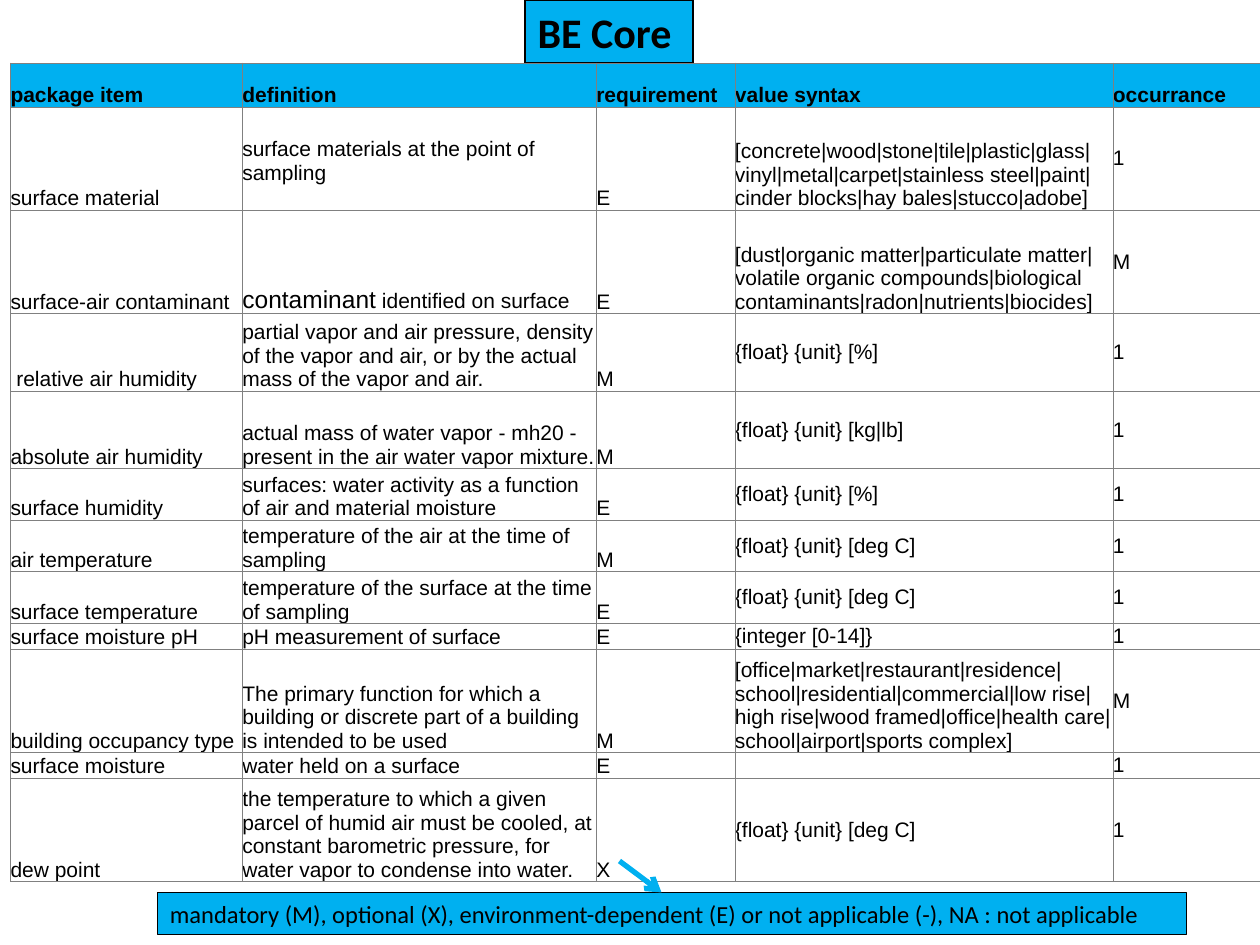
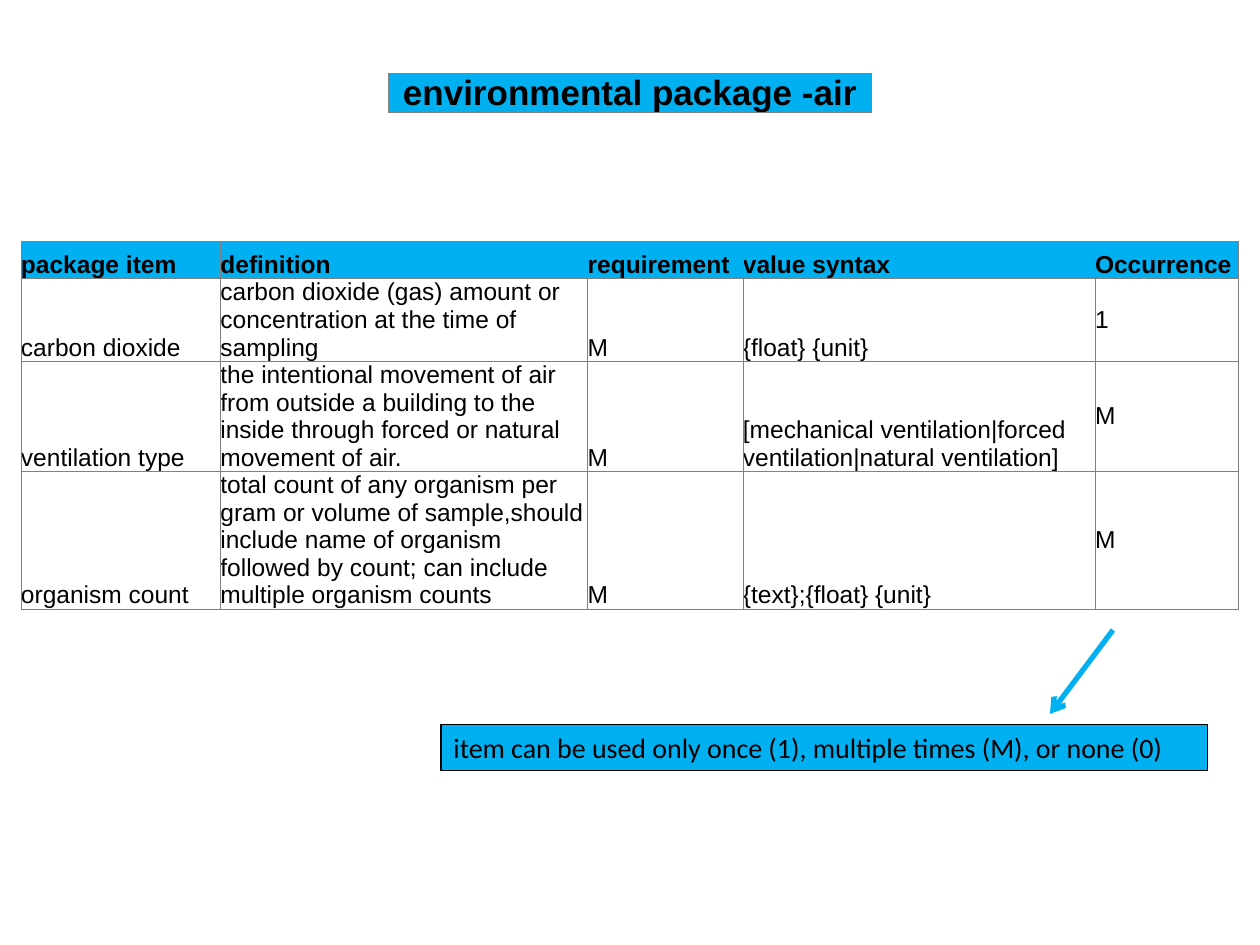
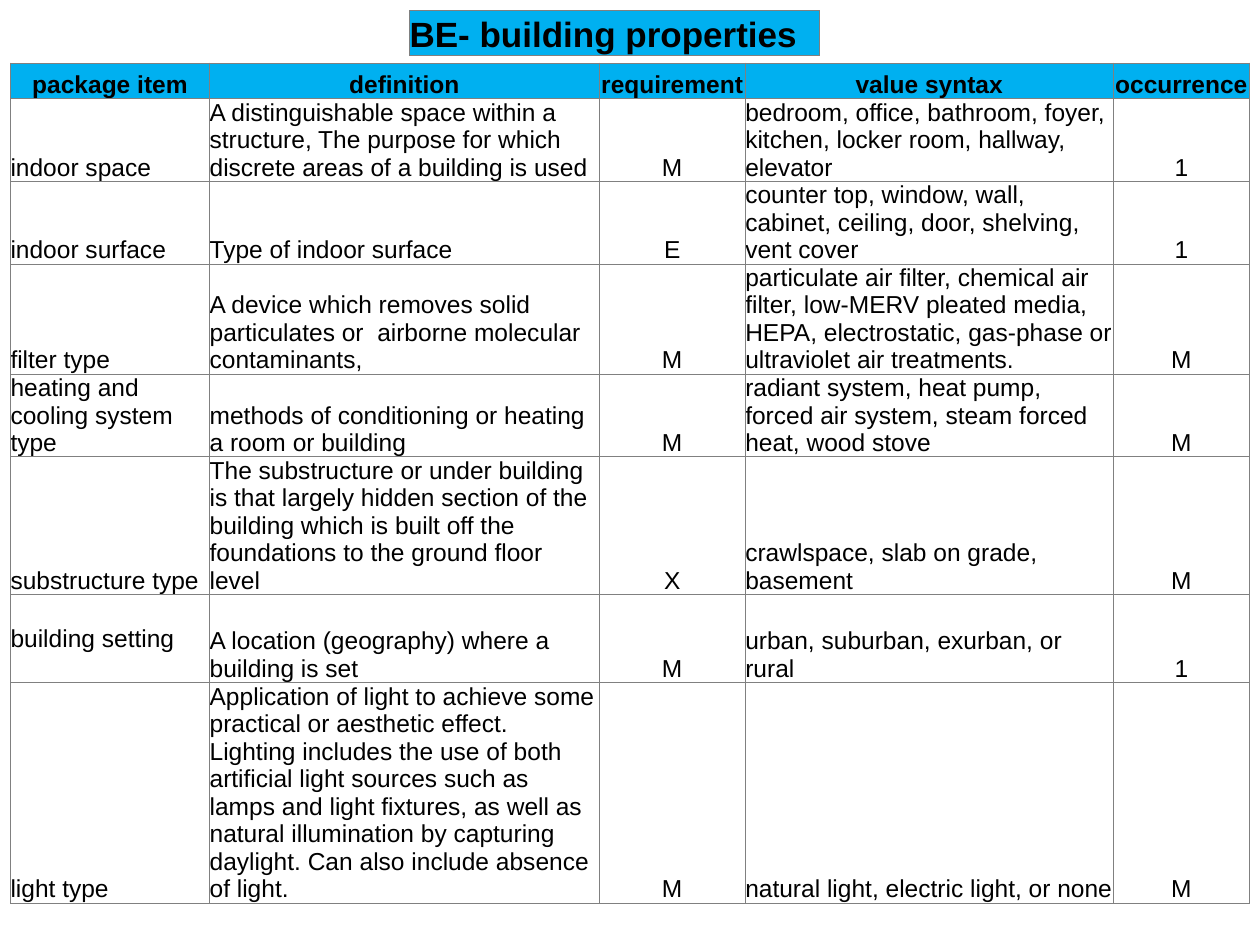
from lxml.etree import SubElement as Sub
from pptx import Presentation
from pptx.dml.color import RGBColor
from pptx.enum.shapes import MSO_CONNECTOR as Link
from pptx.enum.text import MSO_ANCHOR as Anchor, MSO_AUTO_SIZE as Fit, PP_ALIGN as Align
from pptx.oxml.ns import qn
from pptx.util import Inches, Pt

BLUE, BLACK, GREY = "00B0F0", "000000", "808080"
COLS, ROWS = 120, 90  # slide grid, twelve units to the inch
UNIT = Inches(10) / COLS
SIDES = ("left", "right", "top", "bottom")
TEXT = dict(word_wrap=True, auto_size=Fit.NONE)
TITLED, BLANK = 5, 6  # slide layouts

HEAD = ("package item", "definition", "requirement", "value syntax")

CORE = [
    HEAD + ("occurrance",),
    ("surface material", "surface materials at the point of sampling \n", "E",
     "[concrete|wood|stone|tile|plastic|glass|vinyl|metal|carpet|stainless steel|paint|"
     "cinder blocks|hay bales|stucco|adobe]", "1"),
    ("surface-air contaminant", ("contaminant", " identified on surface"), "E",
     "[dust|organic matter|particulate matter|volatile organic compounds|"
     "biological contaminants|radon|nutrients|biocides]", "M"),
    (" relative air humidity", "partial vapor and air pressure, density of the vapor and air, "
     "or by the actual mass of the vapor and air.", "M", "{float} {unit} [%]", "1"),
    ("absolute air humidity", "actual mass of water vapor - mh20 - present in the air "
     "water vapor mixture.", "M", "{float} {unit} [kg|lb]", "1"),
    ("surface humidity", "surfaces: water activity as a function of air and material moisture",
     "E", "{float} {unit} [%]", "1"),
    ("air temperature", "temperature of the air at the time of sampling",
     "M", "{float} {unit} [deg C]", "1"),
    ("surface temperature", "temperature of the surface at the time of sampling",
     "E", "{float} {unit} [deg C]", "1"),
    ("surface moisture pH", "pH measurement of surface", "E", "{integer [0-14]}", "1"),
    ("building occupancy type", "The primary function for which a building or discrete part "
     "of a building is intended to be used", "M",
     "[office|market|restaurant|residence|school|residential|commercial|low rise|high rise|"
     "wood framed|office|health care|school|airport|sports complex]", "M"),
    ("surface moisture", "water held on a surface", "E", "", "1"),
    ("dew point", "the temperature to which a given parcel of humid air must be cooled, "
     "at constant barometric pressure, for water vapor to condense into water.",
     "X", "{float} {unit} [deg C]", "1"),
]

AIR = [
    HEAD + ("Occurrence",),
    ("carbon dioxide", "carbon dioxide (gas) amount or concentration at the time of sampling",
     "M", "{float} {unit}", "1"),
    ("ventilation type", "the intentional movement of air from outside a building to the inside "
     "through forced or natural movement of air.", "M",
     "[mechanical ventilation|forced ventilation|natural ventilation]", "M"),
    ("organism count", "total count of any organism per gram or volume of sample,should include "
     "name of organism followed by count; can include multiple organism counts",
     "M", "{text};{float} {unit}", "M"),
]

BUILD = [
    HEAD + ("occurrence",),
    ("indoor space", "A distinguishable space within a structure, The purpose for which "
     "discrete areas of a building is used", "M",
     "bedroom, office, bathroom, foyer, kitchen, locker room, hallway, elevator", "1"),
    ("indoor surface", "Type of indoor surface", "E",
     "counter top, window, wall, cabinet, ceiling, door, shelving, vent cover", "1"),
    ("filter type", "A device which removes solid particulates or  airborne molecular "
     "contaminants,", "M", "particulate air filter, chemical air filter, low-MERV pleated media, "
     "HEPA, electrostatic, gas-phase or ultraviolet air treatments.", "M"),
    ("heating and cooling system type", "methods of conditioning or heating a room or building",
     "M", "radiant system, heat pump, forced air system, steam forced heat, wood stove", "M"),
    ("substructure type", "The substructure or under building is that largely hidden section of "
     "the building which is built off the foundations to the ground floor level", "X",
     "crawlspace, slab on grade, basement", "M"),
    ("building setting\n", "A location (geography) where a building is set", "M",
     "urban, suburban, exurban, or rural", "1"),
    ("light type", "Application of light to achieve some practical or aesthetic effect. Lighting "
     "includes the use of both artificial light sources such as lamps and light fixtures, as well "
     "as natural illumination by capturing daylight. Can also include absence of light.", "M",
     "natural light, electric light, or none", "M"),
]


def rgb(tone):
    return RGBColor.from_string(tone)


def grid(*vals):
    return [round(v * UNIT) for v in vals]


def style(item, vals):
    for key, val in vals.items():
        setattr(item, key, val)


def write(para, text, size, face="Arial", bold=False):
    run = para.add_run()
    run.text = text
    style(run.font, dict(name=face, size=Pt(size), bold=bold))
    run.font.color.rgb = rgb(BLACK)


def paint(shape):
    shape.fill.solid()
    shape.fill.fore_color.rgb = rgb(BLUE)
    shape.line.color.rgb = rgb(BLACK)
    shape.line.width = Pt(0.75)


def title(slide, box, text):
    shape = slide.shapes.title
    style(shape, dict(zip(("left", "top", "width", "height"), grid(*box))))
    paint(shape)
    style(shape.text_frame, TEXT | dict(vertical_anchor=Anchor.TOP))
    para = shape.text_frame.paragraphs[0]
    para.alignment = Align.LEFT
    write(para, text, 24, "Calibri", bold=True)


def note(slide, box, text, size):
    shape = slide.shapes.add_textbox(*grid(*box))
    paint(shape)
    style(shape.text_frame, TEXT)
    write(shape.text_frame.paragraphs[0], text, size, "Calibri")


def arrow(slide, *ends):
    line = slide.shapes.add_connector(Link.STRAIGHT, *grid(*ends))
    line.line.color.rgb = rgb(BLUE)
    line.line.width = Pt(3)
    Sub(line.line._get_or_add_ln(), qn("a:tailEnd"), type="arrow")
    Sub(line._element.spPr, qn("a:effectLst"))


def rule(cell):
    """Draw a thin grey line on each side of the cell."""
    props = cell._tc.get_or_add_tcPr()
    for spot, side in enumerate("LRTB"):
        edge = Sub(props, qn(f"a:ln{side}"), w=str(Pt(0.5)))
        Sub(Sub(edge, qn("a:solidFill")), qn("a:srgbClr"), val=GREY)
        props.insert(spot, edge)


def fill(cell, text, size, head, mid, align):
    """A line feed at the end becomes a line break; a tuple opens with a larger run."""
    style(cell, {f"margin_{side}": 0 for side in SIDES})
    cell.vertical_anchor = Anchor.MIDDLE if mid else Anchor.BOTTOM
    if head:
        cell.fill.solid()
        cell.fill.fore_color.rgb = rgb(BLUE)
    else:
        cell.fill.background()
    rule(cell)
    para = cell.text_frame.paragraphs[0]
    para.alignment = align
    points = str(size * 100)
    if isinstance(text, tuple):
        write(para, text[0], size + 2)
        write(para, text[1], size)
    elif text:
        write(para, text.rstrip("\n"), size, bold=head)
        if text.endswith("\n"):
            para.add_line_break()
            Sub(para._p.find(qn("a:br")), qn("a:rPr"), sz=points)
    para._p.get_or_add_endParaRPr().set("sz", points)


def table(slide, box, data, cols, lines, size, mids=(), mains=()):
    """Share the box by column weights and lines per row.

    mids are columns set in the middle of the row, mains are centred columns."""
    left, top, wide, high = grid(*box)
    grille = slide.shapes.add_table(len(data), len(cols), left, top, wide, high).table
    style(grille, dict(first_row=False, horz_banding=False))
    for col, part in zip(grille.columns, cols):
        col.width = round(wide * part / sum(cols))
    for row, part in zip(grille.rows, lines):
        row.height = round(high * part / sum(lines))
    for r, row in enumerate(data):
        head = r == 0
        for c, text in enumerate(row):
            mid = c in mids and not head and not text.startswith("[")
            main = c in mains or (head and mains)
            fill(grille.cell(r, c), text, size, head, mid,
                 Align.CENTER if main else Align.LEFT)


def band(slide, box, text, mains=()):
    """Show a heading as a table of one cell."""
    table(slide, box, [(text,)], (1,), (1,), 20, mains=mains)


def core(slide):
    table(slide, (1, 6, 120, 78), CORE, (1.84, 2.81, 1.1, 3, 1.25),
          (1.7, 4, 4, 3, 3, 2, 2, 2, 1, 4, 1, 4), 12, mids=(3, 4))
    note(slide, (15, 85, 98, 4), "mandatory (M), optional (X), environment-dependent (E) "
         "or not applicable (-), NA : not applicable", 14)
    arrow(slide, 59, 82, 63, 85)
    title(slide, (50, 0, 16, 6), "BE Core")


def air(slide):
    band(slide, (37, 7, 46, 3.7), "environmental package -air", mains=(0,))
    table(slide, (2, 23, 116, 35), AIR, (1.58, 2.91, 1.23, 2.79, 1.14),
          (1.35, 3, 4, 5), 14, mids=(4,))
    note(slide, (42, 69, 73, 4.4),
         "item can be used only once (1), multiple times (M), or none (0)", 16)
    arrow(slide, 106, 60, 100, 68)


def build(slide):
    table(slide, (1, 6, 118, 80), BUILD, (1.58, 3.09, 1.16, 2.92, 1.08),
          (1.3, 3, 3, 4, 3, 5, 3.2, 8), 14, mains=(2, 4))
    band(slide, (39, 1, 39, 4.25), "BE- building properties")


def main():
    deck = Presentation()
    style(deck, dict(slide_width=round(COLS * UNIT), slide_height=round(ROWS * UNIT)))
    for draw, kind in ((core, TITLED), (air, BLANK), (build, BLANK)):
        draw(deck.slides.add_slide(deck.slide_layouts[kind]))
    deck.save("out.pptx")


if __name__ == "__main__":
    main()
